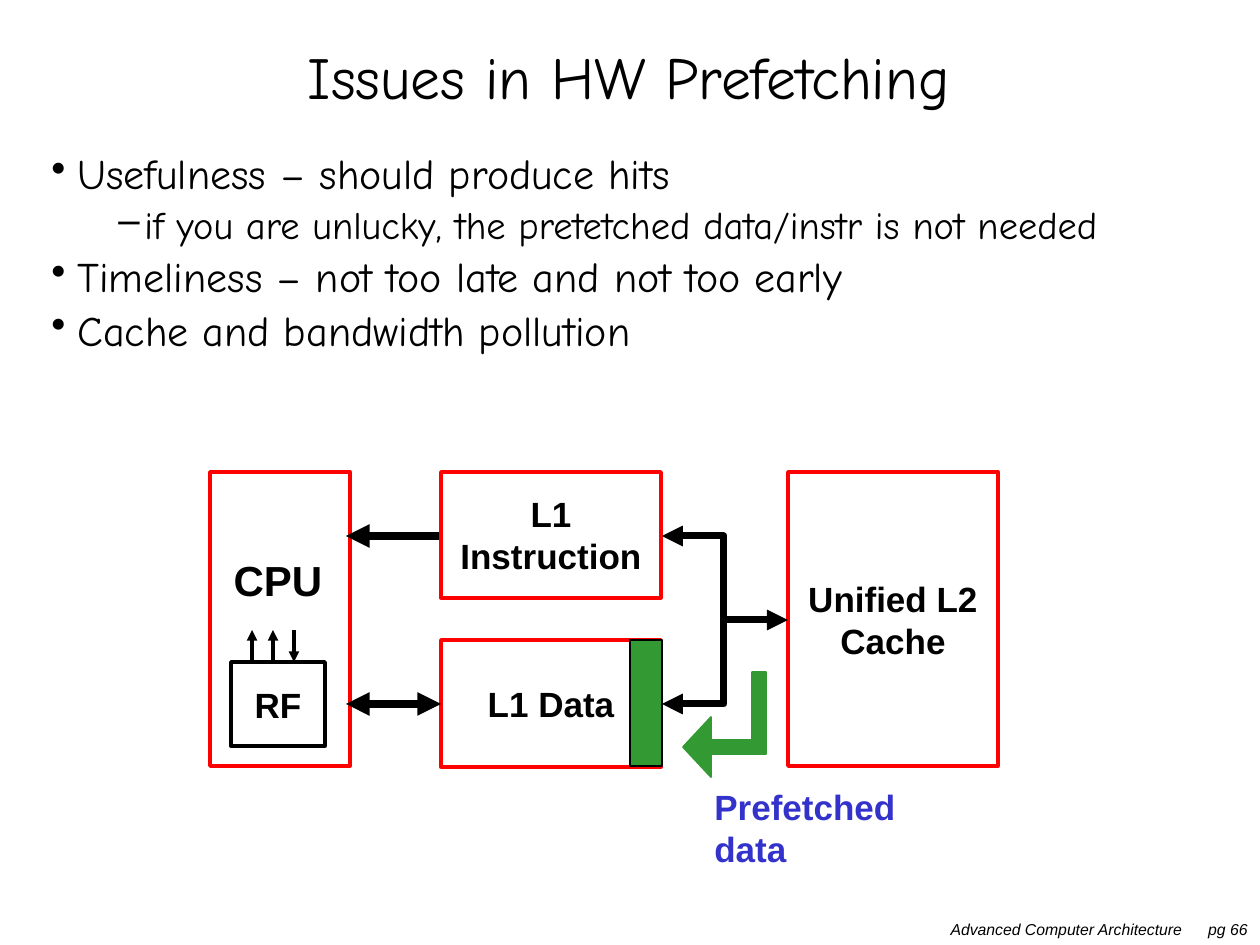
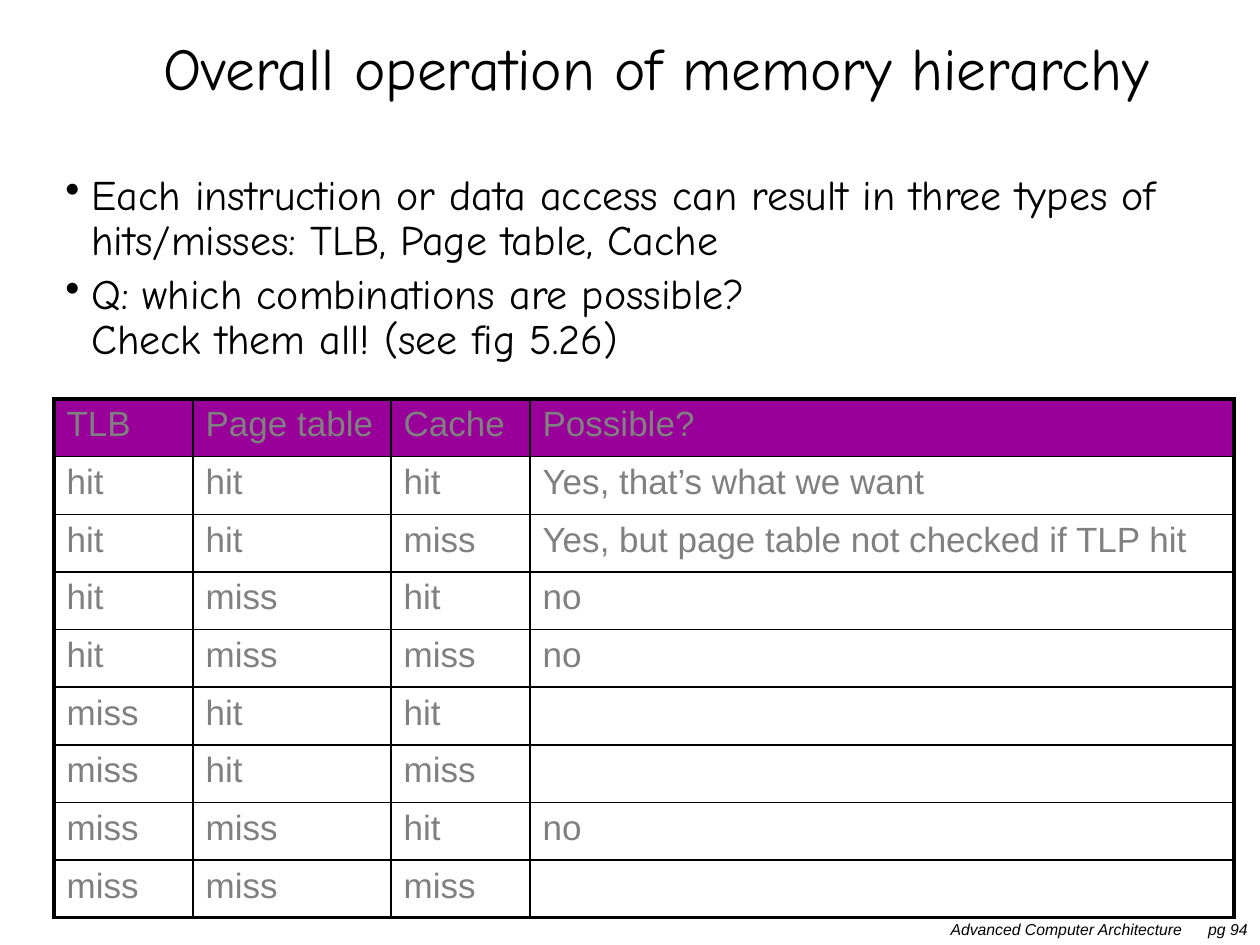
from dataclasses import dataclass

from lxml import etree
from pptx import Presentation
from pptx.dml.color import RGBColor
from pptx.enum.shapes import MSO_CONNECTOR, MSO_SHAPE
from pptx.enum.text import MSO_ANCHOR, PP_ALIGN
from pptx.oxml.ns import qn
from pptx.util import Pt

RECTANGLE = MSO_SHAPE.RECTANGLE
STRAIGHT = MSO_CONNECTOR.STRAIGHT
TOP, MIDDLE = MSO_ANCHOR.TOP, MSO_ANCHOR.MIDDLE
LEFT, CENTER, RIGHT = PP_ALIGN.LEFT, PP_ALIGN.CENTER, PP_ALIGN.RIGHT
PX_PER_INCH = 126
EMU_PER_PX = 914400 / PX_PER_INCH


@dataclass(frozen=True)
class Theme:
    black: str = "000000"
    white: str = "FFFFFF"
    red: str = "FF0000"
    green: str = "339933"
    blue: str = "3333CC"
    purple: str = "990099"
    gray: str = "808080"
    heading_font: str = "Comic Neue"
    label_font: str = "Arial"
    title_size: int = 34
    body_sizes: tuple = (24, 22)
    cpu_size: int = 24
    label_size: int = 20
    footer_size: int = 9
    box_line: float = 2
    bus_line: float = 4
    link_line: float = 4.5
    thin_line: float = 1
    frame_line: float = 2.25


THEME = Theme()
BULLETS = (("•", 26, -26), ("–", 93, -26))
FOOTER_GAP = 12.5


def px(length):
    return round(length * EMU_PER_PX)


def color(value):
    return RGBColor.from_string(value)


def write_text(frame, text, *, new=False, size=THEME.label_size, font=THEME.label_font,
               text_color=THEME.black, bold=False, italic=False, align=LEFT,
               line_spacing=None, space_before=None):
    paragraph = frame.add_paragraph() if new else frame.paragraphs[0]
    paragraph.text = text
    paragraph.alignment = align
    if line_spacing:
        paragraph.line_spacing = line_spacing
    if space_before:
        paragraph.space_before = Pt(space_before)
    for run in paragraph.runs:
        run.font.size = Pt(size)
        run.font.name = font
        run.font.bold = bold
        run.font.italic = italic
        run.font.color.rgb = color(text_color)
    return paragraph


def set_bullet(paragraph, level):
    character, margin, indent = BULLETS[level]
    paragraph.level = level
    properties = paragraph._p.get_or_add_pPr()
    properties.set("marL", str(px(margin)))
    properties.set("indent", str(px(indent)))
    etree.SubElement(properties, qn("a:buChar"), char=character)


def add_text_box(slide, box, anchor=TOP, wrap=True):
    frame = slide.shapes.add_textbox(*map(px, box)).text_frame
    frame.word_wrap = wrap
    frame.vertical_anchor = anchor
    return frame


def add_title(slide, text, box):
    frame = add_text_box(slide, box, MIDDLE)
    write_text(frame, text, size=THEME.title_size, font=THEME.heading_font,
               align=CENTER, line_spacing=0.8)


def add_bullets(slide, items, box):
    frame = add_text_box(slide, box)
    for index, (level, text) in enumerate(items):
        size = THEME.body_sizes[level]
        paragraph = write_text(frame, text, new=index > 0, size=size,
                               font=THEME.heading_font, line_spacing=0.9,
                               space_before=size * 0.2)
        set_bullet(paragraph, level)


def add_footer(slide, page):
    frame = add_text_box(slide, (898, 914, 362, 32))
    paragraph = write_text(frame, "Advanced Computer Architecture", align=RIGHT,
                           size=THEME.footer_size, italic=True)
    for text in (" ", f"pg {page}"):
        run = paragraph.add_run()
        run.text = text
        run.font.size = Pt(THEME.footer_size)
        run.font.name = THEME.label_font
        run.font.italic = True
        run.font.color.rgb = color(THEME.black)
    paragraph.runs[1]._r.get_or_add_rPr().set("spc", str(round(FOOTER_GAP * 100)))


def set_line(shape, line_color, width):
    shape.line.color.rgb = color(line_color)
    shape.line.width = Pt(width)


def add_box(slide, box, text="", *, fill=THEME.white, line=THEME.red,
            width=THEME.box_line, wrap=True):
    shape = slide.shapes.add_shape(RECTANGLE, *map(px, box))
    shape.shadow.inherit = False
    shape.fill.solid()
    shape.fill.fore_color.rgb = color(fill)
    set_line(shape, line, width)
    if text:
        shape.text_frame.word_wrap = wrap
        shape.text_frame.vertical_anchor = MIDDLE
        write_text(shape.text_frame, text, bold=True, align=CENTER)


def add_arrowheads(shape, both):
    line = shape.line._get_or_add_ln()
    for end in ("a:headEnd", "a:tailEnd") if both else ("a:tailEnd",):
        etree.SubElement(line, qn(end), type="triangle")


def add_arrow(slide, start, end, width, both=False):
    connector = slide.shapes.add_connector(STRAIGHT, *map(px, (*start, *end)))
    set_line(connector, THEME.black, width)
    add_arrowheads(connector, both)
    etree.SubElement(connector._element.spPr, qn("a:effectLst"))


def add_outline(slide, points, close):
    start, *others = [(px(x), px(y)) for x, y in points]
    builder = slide.shapes.build_freeform(*start, scale=1.0)
    builder.add_line_segments(others, close=close)
    shape = builder.convert_to_shape()
    shape.shadow.inherit = False
    return shape


def add_bus(slide, points, both=False):
    shape = add_outline(slide, points, close=False)
    shape.fill.background()
    set_line(shape, THEME.black, THEME.bus_line)
    add_arrowheads(shape, both)


def add_block_arrow(slide, points):
    shape = add_outline(slide, points, close=True)
    shape.fill.solid()
    shape.fill.fore_color.rgb = color(THEME.green)
    set_line(shape, THEME.green, THEME.thin_line)


def set_borders(cell, outer_sides):
    properties = cell._tc.get_or_add_tcPr()
    for side, is_outer in zip("LRTB", outer_sides):
        width = THEME.frame_line if is_outer else THEME.thin_line
        border = etree.SubElement(properties, qn(f"a:ln{side}"), w=str(Pt(width)))
        fill = etree.SubElement(border, qn("a:solidFill"))
        etree.SubElement(fill, qn("a:srgbClr"), val=THEME.black)


def add_grid(slide, rows, column_widths, left, top, height):
    last_row, last_column = len(rows) - 1, len(column_widths) - 1
    box = map(px, (left, top, sum(column_widths), height))
    table = slide.shapes.add_table(len(rows), len(column_widths), *box).table
    table.first_row = False
    table.horz_banding = False
    for column, width in zip(table.columns, column_widths):
        column.width = px(width)
    for row_index, values in enumerate(rows):
        table.rows[row_index].height = px(height) // len(rows)
        for column_index, value in enumerate(values):
            cell = table.cell(row_index, column_index)
            set_borders(cell, (column_index == 0, column_index == last_column,
                               row_index == 0, row_index == last_row))
            if row_index == 0:
                cell.fill.solid()
                cell.fill.fore_color.rgb = color(THEME.purple)
            else:
                cell.fill.background()
            write_text(cell.text_frame, value, text_color=THEME.gray)


def add_slide(presentation, title, title_box, page):
    slide = presentation.slides.add_slide(presentation.slide_layouts[6])
    add_footer(slide, page)
    add_title(slide, title, title_box)
    return slide


def draw_cache_diagram(slide):
    top, instruction_y, bus_y, data_y = 472, 536, 620, 704
    cpu_edge, l1_left, l1_right, bus_x, l2_left = 346, 441, 662, 724, 788
    add_box(slide, (210, top, 140, 294))
    add_box(slide, (l1_left, 640, 220, 127), "L1 Data")
    for y, both in ((instruction_y, False), (data_y, True)):
        add_arrow(slide, (l1_left, y), (cpu_edge, y), THEME.link_line, both)
    add_box(slide, (l1_left, top, 220, 126), "L1 Instruction")
    add_box(slide, (l2_left, top, 210, 294), "Unified L2 Cache")
    add_bus(slide, [(l1_right, instruction_y), (bus_x, instruction_y),
                    (bus_x, bus_y), (l2_left, bus_y)], both=True)
    add_bus(slide, [(bus_x, bus_y), (bus_x, data_y), (l1_right, data_y)])

    add_box(slide, (231, 662, 94, 84), "RF", line=THEME.black, wrap=False)
    register_top, port_top = 662, 630
    for x, start_y, end_y in ((252, register_top, port_top),
                              (273, register_top, port_top),
                              (294, port_top, register_top)):
        add_arrow(slide, (x, start_y), (x, end_y), THEME.box_line)
    write_text(add_text_box(slide, (210, 548, 136, 63)), "CPU",
               size=THEME.cpu_size, bold=True, align=CENTER)

    add_block_arrow(slide, [(683, 747), (711, 717), (711, 740), (752, 740), (752, 672),
                            (766, 672), (766, 754), (711, 754), (711, 777)])
    write_text(add_text_box(slide, (702, 779, 287, 54), wrap=False), "Prefetched data",
               text_color=THEME.blue, bold=True)
    add_box(slide, (630, 640, 32, 126), fill=THEME.green, line=THEME.black,
            width=THEME.thin_line)


def build_prefetching(presentation):
    slide = add_slide(presentation, "Issues in HW Prefetching", (40, 32, 1178, 101), 66)
    add_bullets(slide, [
        (0, "Usefulness – should produce hits"),
        (1, "if you are unlucky, the pretetched data/instr is not needed"),
        (0, "Timeliness – not too late and not too early"),
        (0, "Cache and bandwidth pollution"),
    ], (39, 147, 1183, 745))
    draw_cache_diagram(slide)


def build_memory_hierarchy(presentation):
    slide = add_slide(presentation, "Overall operation of memory hierarchy",
                      (53, 21, 1207, 105), 94)
    add_bullets(slide, [
        (0, "Each instruction or data access can result in three types of "
            "hits/misses: TLB, Page table, Cache"),
        (0, "Q: which combinations are possible?\vCheck them all! (see fig 5.26)"),
    ], (53, 168, 1155, 220))
    add_grid(slide, [
        ("TLB", "Page table", "Cache", "Possible?"),
        ("hit", "hit", "hit", "Yes, that’s what we want"),
        ("hit", "hit", "miss", "Yes, but page table not checked if TLP hit"),
        ("hit", "miss", "hit", "no"),
        ("hit", "miss", "miss", "no"),
        ("miss", "hit", "hit", ""),
        ("miss", "hit", "miss", ""),
        ("miss", "miss", "hit", "no"),
        ("miss", "miss", "miss", ""),
    ], (139, 198, 139, 704), left=54, top=399, height=519)


def main():
    presentation = Presentation()
    presentation.slide_width = px(1260)
    presentation.slide_height = px(945)
    build_prefetching(presentation)
    build_memory_hierarchy(presentation)
    presentation.save("out.pptx")


if __name__ == "__main__":
    main()
